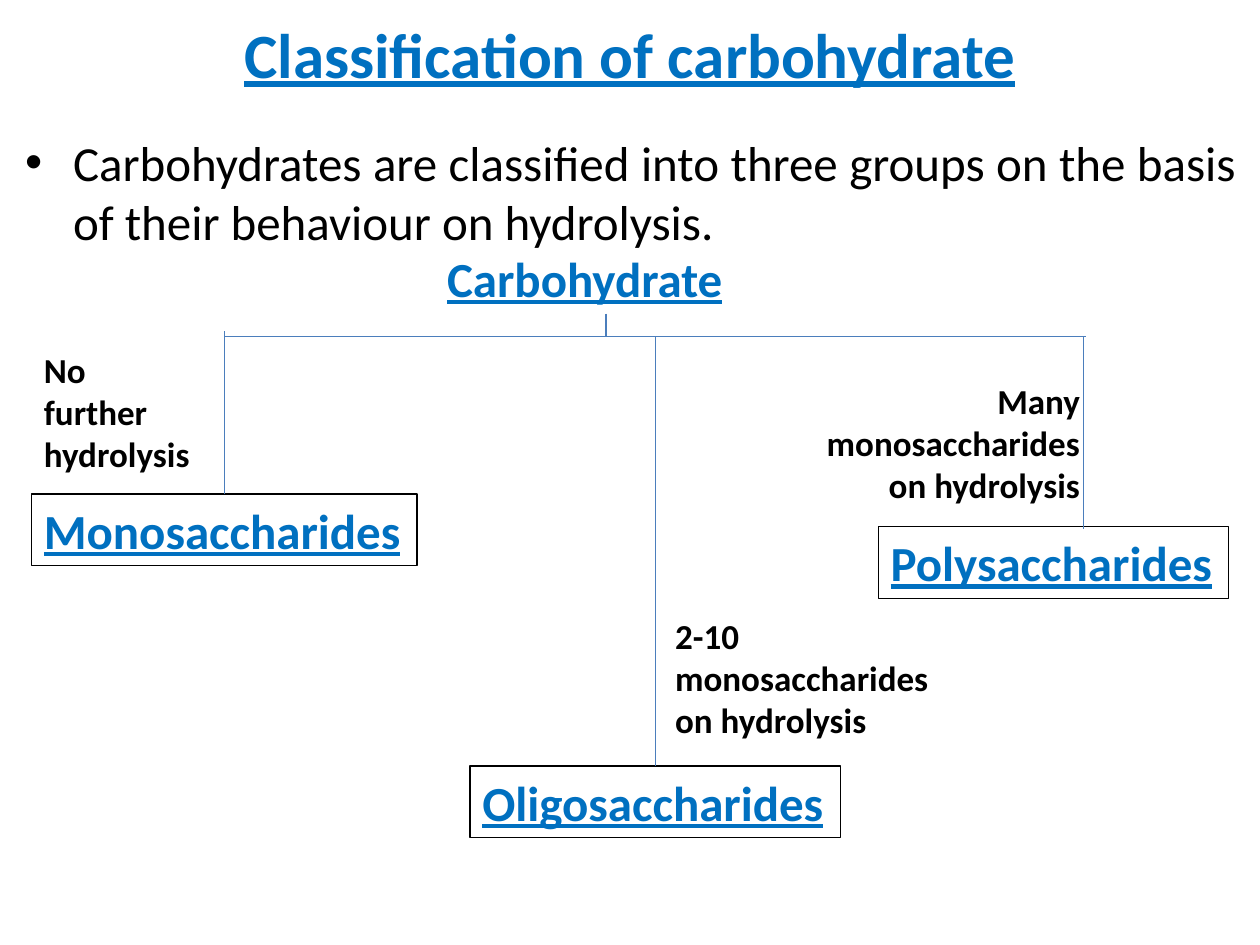
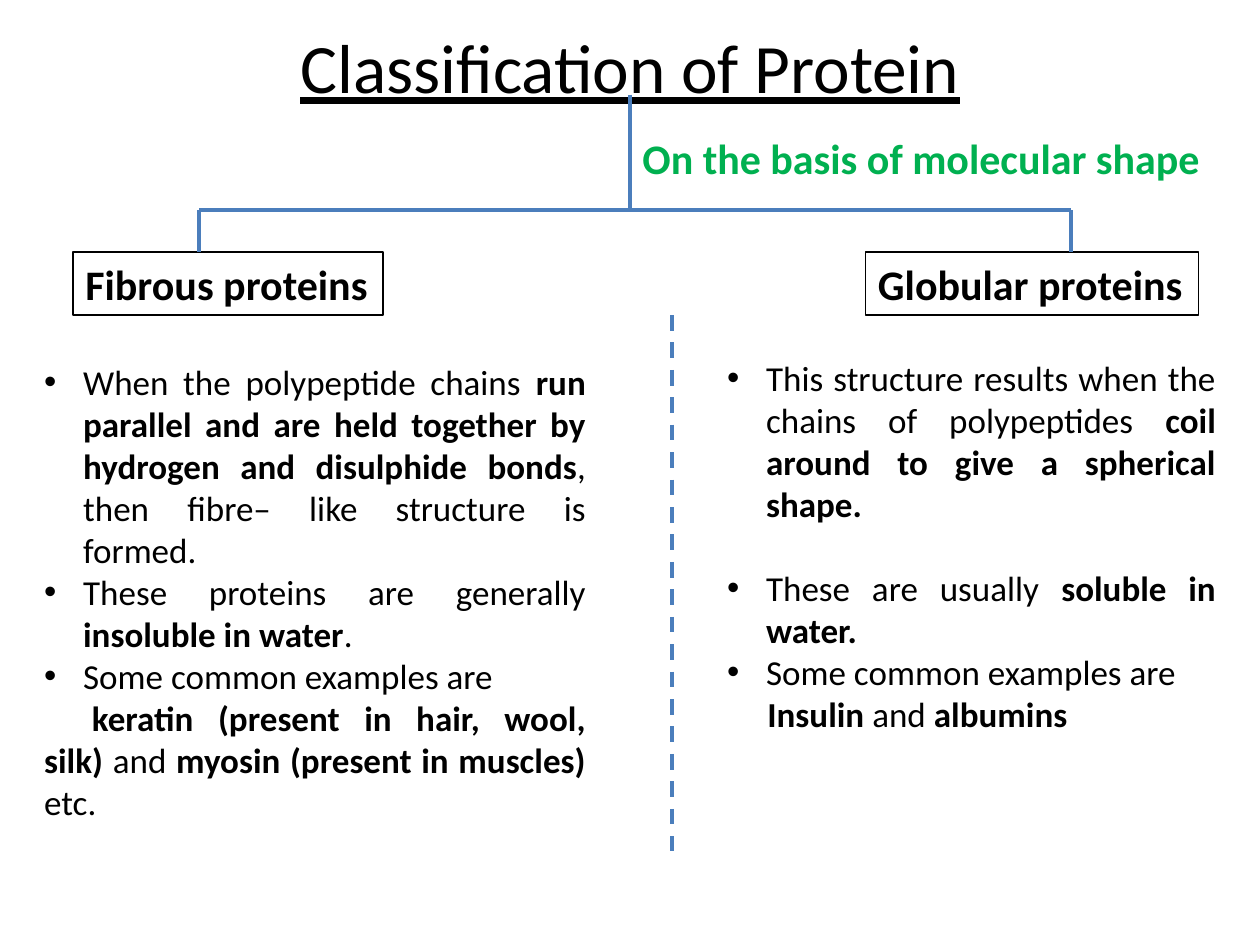
from lxml import etree
from pptx import Presentation
from pptx import util as u
from pptx.dml.color import RGBColor
from pptx.enum import dml, shapes, text
from pptx.oxml import ns

FONT = "Calibri"
BLACK, BLUE, GREEN, STEEL = "000000", "0070C0", "00B050", "4B7EBC"
LEFT, MID, RIGHT, JUST = (text.PP_ALIGN.LEFT, text.PP_ALIGN.CENTER,
                          text.PP_ALIGN.RIGHT, text.PP_ALIGN.JUSTIFY)


def tint(hue):
    """Turn a hex string into a colour."""
    return RGBColor.from_string(hue)


def place(item, box):
    """Move an item to left, top, width and height in inches."""
    item.left, item.top, item.width, item.height = map(u.Inches, box)


def add_run(para, words, size, hue=BLACK, bold=False, under=False):
    """Add one formatted run to a paragraph."""
    run = para.add_run()
    run.text = words
    font = run.font
    font.name, font.size, font.bold = FONT, u.Pt(size), bold
    font.underline = under
    font.color.rgb = tint(hue)


def set_title(slide, words, box, size, **look):
    """Fill and move the underlined title."""
    title = slide.shapes.title
    place(title, box)
    frame = title.text_frame
    frame.auto_size = text.MSO_AUTO_SIZE.NONE
    frame.vertical_anchor = text.MSO_ANCHOR.MIDDLE
    para = frame.paragraphs[0]
    para.alignment = MID
    add_run(para, words, size, under=True, **look)


def set_list(holder, box, items, size, hang, gap=None):
    """Fill a body placeholder with (runs, first indent, space before) items."""
    place(holder, box)
    frame = holder.text_frame
    frame.auto_size = text.MSO_AUTO_SIZE.NONE
    for i, (runs, first, before) in enumerate(items):
        para = frame.add_paragraph() if i else frame.paragraphs[0]
        para.alignment = JUST
        if gap is not None:
            para.space_before = u.Pt(gap + before)
        props = para._p.get_or_add_pPr()
        plain = first is not None
        props.set("marL", str(0 if plain else u.Inches(hang)))
        props.set("indent", str(u.Inches(first if plain else -hang)))
        if plain:
            etree.SubElement(props, ns.qn("a:buNone"))
        for words, bold in runs:
            add_run(para, words, size, bold=bold)


def fill(shape, lines, size, align=LEFT, wrap=False, **look):
    """Write bold lines into a shape that grows with its text."""
    frame = shape.text_frame
    frame.word_wrap = wrap
    frame.auto_size = text.MSO_AUTO_SIZE.SHAPE_TO_FIT_TEXT
    frame.vertical_anchor = text.MSO_ANCHOR.TOP
    for i, words in enumerate(lines):
        para = frame.add_paragraph() if i else frame.paragraphs[0]
        para.alignment = align
        add_run(para, words, size, bold=True, **look)


def add_note(slide, box, lines, size, **look):
    """Add a bold text box."""
    fill(slide.shapes.add_textbox(*map(u.Inches, box)), lines, size, **look)


def add_box(slide, box, words, size, **look):
    """Add an outlined class name and return it."""
    shape = slide.shapes.add_shape(shapes.MSO_SHAPE.RECTANGLE,
                                   *map(u.Inches, box))
    shape.shadow.inherit = False
    shape.fill.background()
    shape.line.color.rgb = tint(BLACK)
    shape.line.width = u.Pt(0.75)
    fill(shape, [words], size, **look)
    return shape


def add_line(slide, ends, width, goal=None, dash=False):
    """Draw a straight line, joined to the top of a goal box if given."""
    line = slide.shapes.add_connector(shapes.MSO_CONNECTOR.STRAIGHT,
                                      *map(u.Inches, ends))
    line.line.color.rgb = tint(STEEL)
    line.line.width = u.Pt(width)
    if dash:
        line.line.dash_style = dml.MSO_LINE.DASH
    etree.SubElement(line._element.spPr, ns.qn("a:effectLst"))
    if goal is not None:
        line.end_connect(goal, 0)


def carbs(deck):
    """Build the carbohydrate slide."""
    slide = deck.slides.add_slide(deck.slide_layouts[1])
    set_title(slide, "Classification of carbohydrate", (0.5, 0.17, 9, 0.5),
              36, hue=BLUE, bold=True)
    intro = ("Carbohydrates are classified into three groups on the basis "
             "of their behaviour on hydrolysis.")
    set_list(slide.placeholders[1], (0.1, 1, 9.81, 1.17),
             [([(intro, False)], None, 0)], 28, 0.38)
    head = {"size": 28, "hue": BLUE, "under": True}
    add_note(slide, (3.45, 1.92, 2.41, 0.57), ["Carbohydrate"], **head)
    mono = add_box(slide, (0.25, 3.92, 3.06, 0.57), "Monosaccharides", **head)
    oligo = add_box(slide, (3.73, 6.08, 2.94, 0.57), "Oligosaccharides", **head)
    add_box(slide, (6.97, 4.18, 2.78, 0.57), "Polysaccharides", **head)
    for ends, goal in [((4.81, 2.49, 4.81, 2.67), None),
                       ((1.78, 2.67, 8.62, 2.67), None),
                       ((1.78, 2.63, 1.78, 3.92), mono),
                       ((5.2, 2.67, 5.2, 6.08), oligo),
                       ((8.6, 2.67, 8.6, 4.2), None)]:
        add_line(slide, ends, 0.75, goal)
    for box, lines, align in [
            ((0.25, 2.72, 1.4, 1.11), ["No further hydrolysis"], LEFT),
            ((5.26, 4.83, 2.7, 1.11),
             ["2-10 monosaccharides", "on hydrolysis"], LEFT),
            ((6.42, 2.96, 2.25, 1.11),
             ["Many monosaccharides on hydrolysis"], RIGHT)]:
        add_note(slide, box, lines, 20, align=align, wrap=True)


def proteins(deck):
    """Build the protein slide."""
    slide = deck.slides.add_slide(deck.slide_layouts[3])
    set_title(slide, "Classification of Protein", (0.5, 0.3, 9, 0.45), 39.6)
    samples = ([("Some common examples are", False)], None, 0)
    fibrous = [
        ([("When the polypeptide chains ", False),
          ("run parallel and are held together by hydrogen and "
           "disulphide bonds", True),
          (", then fibre– like structure is formed.", False)], None, 0),
        ([("These proteins are generally ", False),
          ("insoluble in water", True), (".", False)], None, 0),
        samples,
        ([("keratin (present in hair, wool, silk) ", True), ("and ", False),
          ("myosin (present in muscles) ", True), ("etc.", False)], 0.38, 0)]
    globular = [
        ([("This structure results when the chains of polypeptides ", False),
          ("coil around to give a spherical shape.", True)], None, 0),
        ([("These are usually ", False), ("soluble in water.", True)],
         None, 24),
        samples,
        ([("Insulin", True), (" and ", False), ("albumins", True)], 0.32, 0)]
    set_list(slide.placeholders[1], (0.25, 2.81, 4.5, 3.47), fibrous,
             20, 0.31, 0)
    set_list(slide.placeholders[2], (5.67, 2.78, 4.08, 3.13), globular,
             20, 0.31, 0)
    add_note(slide, (5, 1, 4.67, 0.5), ["On the basis of molecular shape"],
             24, hue=GREEN)
    add_box(slide, (0.58, 2, 2.46, 0.5), "Fibrous proteins", 24)
    add_box(slide, (6.87, 2, 2.64, 0.5), "Globular proteins", 24)
    for ends in [(5, 0.75, 5, 1.67), (1.58, 1.67, 8.5, 1.67),
                 (1.58, 1.67, 1.58, 2), (8.5, 1.67, 8.5, 2)]:
        add_line(slide, ends, 2.25)
    add_line(slide, (5.33, 2.5, 5.33, 6.75), 2.25, dash=True)


def main():
    """Build and save the deck."""
    deck = Presentation()
    deck.slide_width, deck.slide_height = u.Inches(10), u.Inches(7.5)
    carbs(deck)
    proteins(deck)
    deck.save("out.pptx")


if __name__ == "__main__":
    main()
